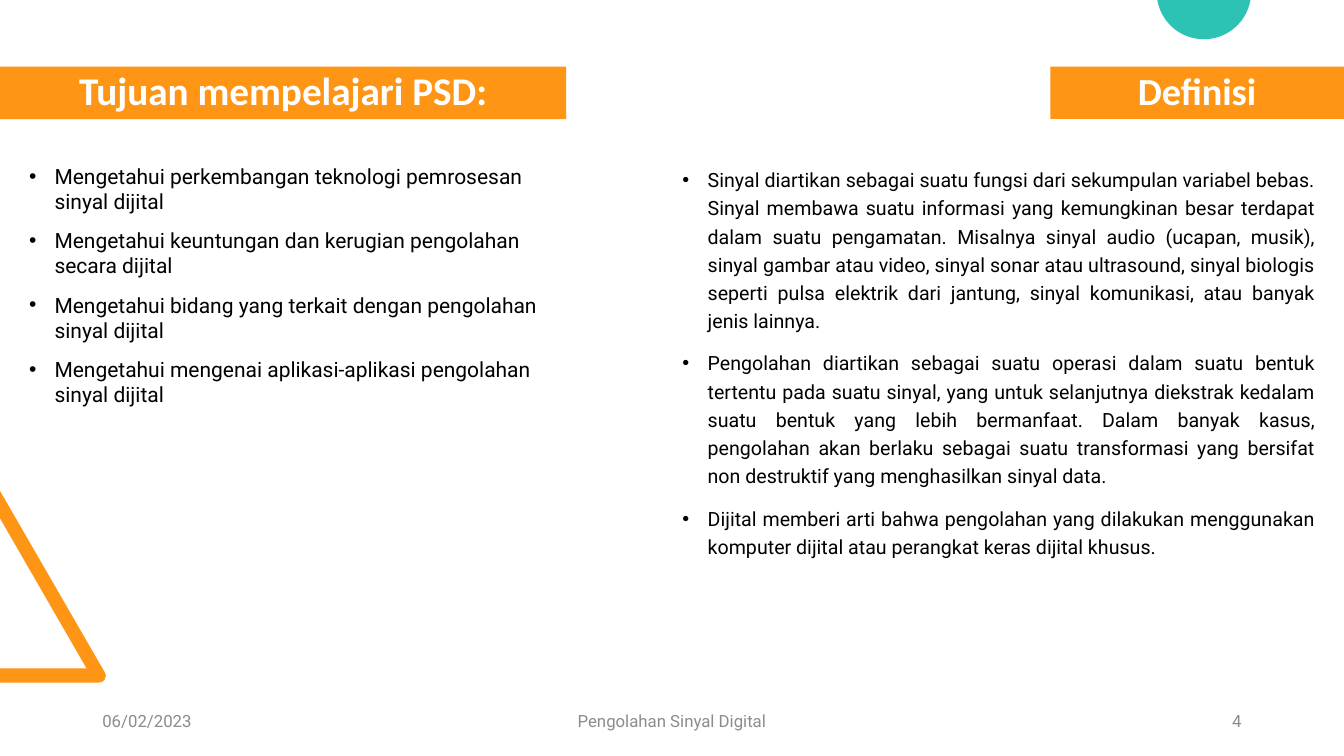
from math import asin, cos, pi, sin

from lxml import etree
from pptx import Presentation
from pptx.dml.color import RGBColor
from pptx.enum.shapes import MSO_SHAPE
from pptx.enum.text import MSO_ANCHOR, MSO_AUTO_SIZE, PP_ALIGN
from pptx.oxml.ns import qn
from pptx.util import Cm, Pt

RECTANGLE = MSO_SHAPE.RECTANGLE
LEFT, CENTER, RIGHT, JUSTIFY = PP_ALIGN.LEFT, PP_ALIGN.CENTER, PP_ALIGN.RIGHT, PP_ALIGN.JUSTIFY
TOP, MIDDLE = MSO_ANCHOR.TOP, MSO_ANCHOR.MIDDLE
NO_AUTOFIT = MSO_AUTO_SIZE.NONE

ORANGE, TEAL, WHITE, BLACK, GRAY = "FF9514", "2CC3B4", "FFFFFF", "000000", "8C8C8C"
SLIDE_WIDTH, SLIDE_HEIGHT = 33.87, 19.05
BAR_TOP, BAR_HEIGHT = 1.68, 1.32
BODY_TOP = 3.99

GOALS = [
    "Mengetahui perkembangan teknologi pemrosesan sinyal dijital",
    "Mengetahui keuntungan dan kerugian pengolahan secara dijital",
    "Mengetahui bidang yang terkait dengan pengolahan sinyal dijital",
    "Mengetahui mengenai aplikasi-aplikasi pengolahan sinyal dijital",
]
DEFINITIONS = [
    "Sinyal diartikan sebagai suatu fungsi dari sekumpulan variabel bebas. Sinyal membawa "
    "suatu informasi yang kemungkinan besar terdapat dalam suatu pengamatan. Misalnya sinyal "
    "audio (ucapan, musik), sinyal gambar atau video, sinyal sonar atau ultrasound, sinyal "
    "biologis seperti pulsa elektrik dari jantung, sinyal komunikasi, atau banyak jenis lainnya.",
    "Pengolahan diartikan sebagai suatu operasi dalam suatu bentuk tertentu pada suatu sinyal, "
    "yang untuk selanjutnya diekstrak kedalam suatu bentuk yang lebih bermanfaat. Dalam banyak "
    "kasus, pengolahan akan berlaku sebagai suatu transformasi yang bersifat non destruktif "
    "yang menghasilkan sinyal data.",
    "Dijital memberi arti bahwa pengolahan yang dilakukan menggunakan komputer dijital atau "
    "perangkat keras dijital khusus.",
]


def color(hex_string):
    """Return the colour for a hex string."""
    return RGBColor.from_string(hex_string)


def place(shape, box):
    """Move a shape to a box of left, top, width and height in centimetres."""
    shape.left, shape.top, shape.width, shape.height = map(Cm, box)


def paint(shape, fill):
    """Give a shape a plain fill without outline."""
    shape.fill.solid()
    shape.fill.fore_color.rgb = color(fill)
    shape.line.fill.background()


def add_bullet(paragraph):
    """Give a paragraph a round bullet with a hanging indent."""
    properties = paragraph._p.get_or_add_pPr()
    properties.set("marL", str(Cm(0.64)))
    properties.set("indent", str(-Cm(0.64)))
    etree.SubElement(properties, qn("a:buFont")).set("typeface", "Arial")
    etree.SubElement(properties, qn("a:buChar")).set("char", "•")


def write(shape, texts, font="Roboto", size=12, fill=BLACK, bold=False, align=LEFT,
          anchor=MIDDLE, spacing=1.0, before=0, bullet=False):
    """Write one formatted paragraph per text into a shape."""
    frame = shape.text_frame
    frame.word_wrap = True
    frame.auto_size = NO_AUTOFIT
    frame.vertical_anchor = anchor
    for index, text in enumerate(texts):
        paragraph = frame.add_paragraph() if index else frame.paragraphs[0]
        paragraph.alignment = align
        paragraph.line_spacing = spacing
        paragraph.space_before = Pt(before)
        if bullet:
            add_bullet(paragraph)
        run = paragraph.add_run()
        run.text = text
        run.font.name, run.font.size, run.font.bold = font, Pt(size), bold
        run.font.color.rgb = color(fill)


def build_heading(shape, box, text, size):
    """Turn a shape into an orange heading bar."""
    place(shape, box)
    paint(shape, ORANGE)
    write(shape, [text], font="Calibri", size=size, fill=WHITE, bold=True,
          align=CENTER, spacing=0.9)


def build_list(placeholder, box, texts, **text_format):
    """Place a body placeholder and fill it with bullets."""
    place(placeholder, box)
    write(placeholder, texts, anchor=TOP, before=10, bullet=True, **text_format)


def add_outline(slide, points, fill):
    """Draw a filled polygon through points in centimetres."""
    corners = [(Cm(x), Cm(y)) for x, y in points]
    builder = slide.shapes.build_freeform(*corners[0])
    builder.add_line_segments(corners[1:], close=True)
    shape = builder.convert_to_shape()
    shape.shadow.inherit = False
    paint(shape, fill)


def build_decorations(slide):
    """Draw the cut circle at the top and the open triangle at the left edge."""
    center_x, center_y, radius, steps = 30.34, -0.2, 1.19, 48
    start = asin(-center_y / radius)
    angles = [start + (pi - 2 * start) * step / steps for step in range(steps + 1)]
    add_outline(slide, [(center_x + radius * cos(angle), center_y + radius * sin(angle))
                        for angle in angles], TEAL)
    add_outline(slide, [(0, 17.2), (0, 16.84), (2.18, 16.84), (0, 13.06), (0, 12.37),
                        (2.64, 16.94), (2.67, 17.02), (2.64, 17.12), (2.58, 17.18),
                        (2.49, 17.2)], ORANGE)


def build_footer(slide, top, height):
    """Write the date, the course name and the page number."""
    for text, left, width, align in [
        ("06/02/2023", 2.33, 7.62, LEFT),
        ("Pengolahan Sinyal Digital", 11.22, 11.43, CENTER),
        ("4", 23.92, 7.62, RIGHT),
    ]:
        box = slide.shapes.add_textbox(Cm(left), Cm(top), Cm(width), Cm(height))
        write(box, [text], fill=GRAY, align=align)


def build_slide(presentation):
    """Build the slide with the goals and the definitions."""
    slide = presentation.slides.add_slide(presentation.slide_layouts.get_by_name("Two Content"))
    title, goals, definitions = slide.placeholders
    build_decorations(slide)
    build_heading(title, (0, BAR_TOP, 14.27, BAR_HEIGHT), "Tujuan mempelajari PSD:", 28)
    build_footer(slide, 17.65, 1.02)
    build_list(goals, (0.48, BODY_TOP, 13.79, 8.81), GOALS, size=15)
    bar_box = (26.47, BAR_TOP, SLIDE_WIDTH - 26.47, BAR_HEIGHT)
    bar = slide.shapes.add_shape(RECTANGLE, *map(Cm, bar_box))
    bar.shadow.inherit = False
    build_heading(bar, bar_box, "Definisi", 27.3)
    build_list(definitions, (16.94, BODY_TOP, 16.46, 11.43), DEFINITIONS, size=14,
               align=JUSTIFY, spacing=1.2)
    paint(definitions, WHITE)


def main():
    """Create and save the presentation."""
    presentation = Presentation()
    presentation.slide_width, presentation.slide_height = Cm(SLIDE_WIDTH), Cm(SLIDE_HEIGHT)
    build_slide(presentation)
    presentation.save("out.pptx")


if __name__ == "__main__":
    main()
